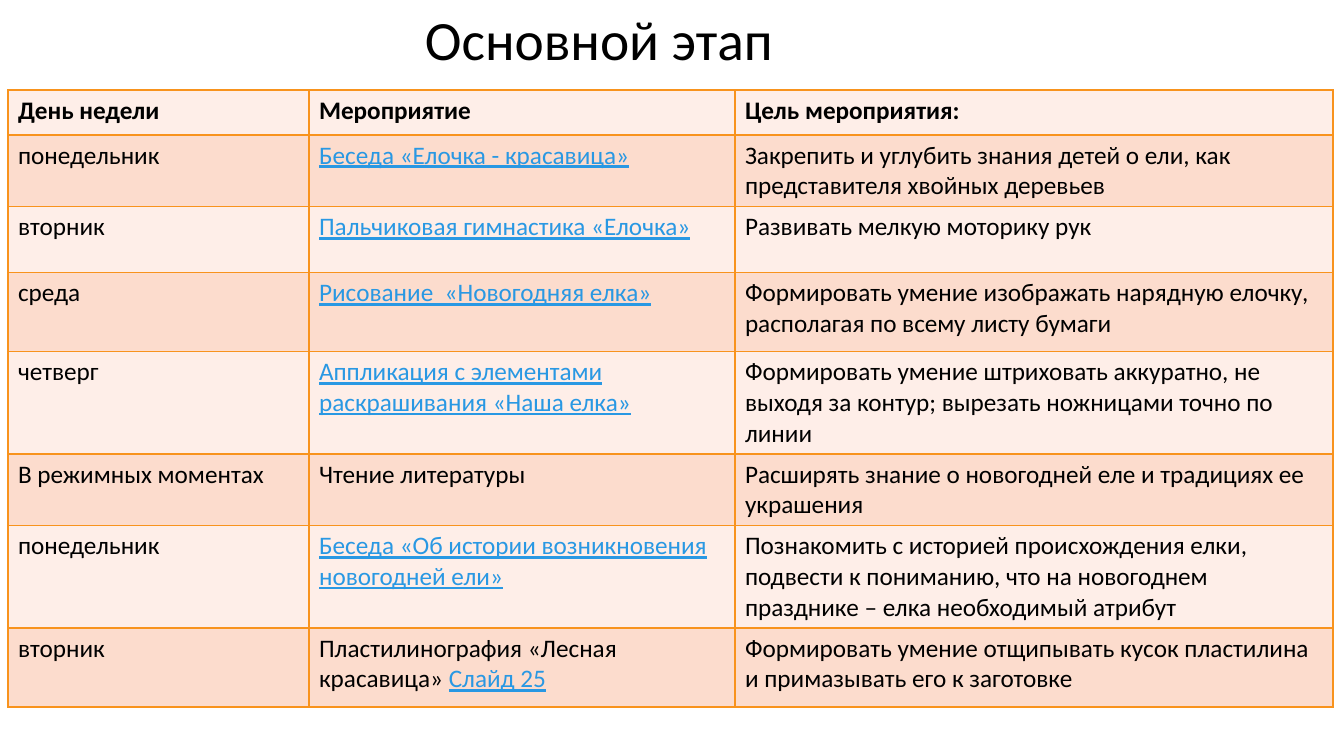
"""Build the slide with the weekly plan of the main stage."""
from dataclasses import dataclass

from lxml.etree import SubElement
from pptx import Presentation
from pptx.dml.color import RGBColor
from pptx.enum.text import MSO_ANCHOR, MSO_AUTO_SIZE, PP_ALIGN
from pptx.oxml.ns import qn
from pptx.util import Emu, Pt

SCALE = 914400 / 100.8
COLORS = {
    "text": "000000",
    "link": "2998E3",
    "border": "F8931D",
    "light": "FEEEE8",
    "dark": "FCDCCD",
}
COLUMN_WIDTHS = (301, 426, 598)


@dataclass
class Event:
    day: str
    goal: str
    height: int
    plain: str = ""
    link: str = ""
    bold: bool = False


EVENTS = (
    Event("День недели", "Цель мероприятия:", 45, plain="Мероприятие", bold=True),
    Event("понедельник",
          "Закрепить и углубить знания детей о ели, как представителя хвойных деревьев",
          66, link="Беседа «Елочка - красавица»"),
    Event("вторник", "Развивать мелкую моторику рук",
          66, link="Пальчиковая гимнастика «Елочка»"),
    Event("среда",
          "Формировать умение изображать нарядную елочку, располагая по всему листу бумаги",
          79, link="Рисование  «Новогодняя елка»"),
    Event("четверг",
          "Формировать умение штриховать аккуратно, не выходя за контур; "
          "вырезать ножницами точно по линии",
          79, link="Аппликация с элементами раскрашивания «Наша елка»"),
    Event("В режимных моментах",
          "Расширять знание о новогодней еле и традициях ее украшения",
          65, plain="Чтение литературы"),
    Event("понедельник",
          "Познакомить с историей происхождения елки, подвести к пониманию, "
          "что на новогоднем празднике – елка необходимый атрибут",
          79, link="Беседа «Об истории возникновения новогодней ели»"),
    Event("вторник",
          "Формировать умение отщипывать кусок пластилина и примазывать его к заготовке",
          79, plain="Пластилинография «Лесная красавица» ", link="Слайд 25"),
)


def px(n: int) -> Emu:
    return Emu(round(n * SCALE))


def rgb(name: str) -> RGBColor:
    return RGBColor.from_string(COLORS[name])


def set_font(p, size: float, bold: bool = False) -> None:
    p.font.name = "Calibri"
    p.font.size = Pt(size)
    p.font.bold = bold
    p.font.color.rgb = rgb("text")


def add_borders(cell) -> None:
    tc_pr = cell._tc.get_or_add_tcPr()
    for i, side in enumerate(("lnL", "lnR", "lnT", "lnB")):
        ln = SubElement(tc_pr, qn(f"a:{side}"), w=str(Pt(1)))
        fill = SubElement(ln, qn("a:solidFill"))
        SubElement(fill, qn("a:srgbClr"), val=COLORS["border"])
        tc_pr.insert(i, ln)


def fill_cell(cell, fill: str, bold: bool, plain: str, link: str = "") -> None:
    cell.fill.solid()
    cell.fill.fore_color.rgb = rgb(fill)
    add_borders(cell)
    p = cell.text_frame.paragraphs[0]
    set_font(p, 18, bold)
    if plain:
        p.add_run().text = plain
    if link:
        r = p.add_run()
        r.text = link
        r.font.underline = True
        r.font.color.rgb = rgb("link")


def add_title(s) -> None:
    title = s.shapes.title
    title.left, title.top, title.width, title.height = map(px, (93, 14, 1159, 57))
    tf = title.text_frame
    tf.text = "Основной этап"
    tf.auto_size = MSO_AUTO_SIZE.NONE
    tf.vertical_anchor = MSO_ANCHOR.MIDDLE
    tf.margin_left = px(332)
    p = tf.paragraphs[0]
    p.alignment = PP_ALIGN.LEFT
    p.line_spacing = 0.9
    set_font(p, 39.6)


def add_plan(s) -> None:
    width, height = sum(COLUMN_WIDTHS), sum(e.height for e in EVENTS)
    frame = s.shapes.add_table(len(EVENTS), len(COLUMN_WIDTHS),
                               px(8), px(90), px(width), px(height))
    table = frame.table
    table.first_row = table.horz_banding = False
    for column, w in zip(table.columns, COLUMN_WIDTHS):
        column.width = px(w)
    for i, (row, event) in enumerate(zip(table.rows, EVENTS)):
        row.height = px(event.height)
        fill = "dark" if i % 2 else "light"
        day, activity, goal = row.cells
        fill_cell(day, fill, event.bold, event.day)
        fill_cell(activity, fill, event.bold, event.plain, event.link)
        fill_cell(goal, fill, event.bold, event.goal)


def main() -> None:
    prs = Presentation()
    prs.slide_width, prs.slide_height = px(1344), px(756)
    s = prs.slides.add_slide(prs.slide_layouts[5])
    add_title(s)
    add_plan(s)
    prs.save("out.pptx")


if __name__ == "__main__":
    main()
